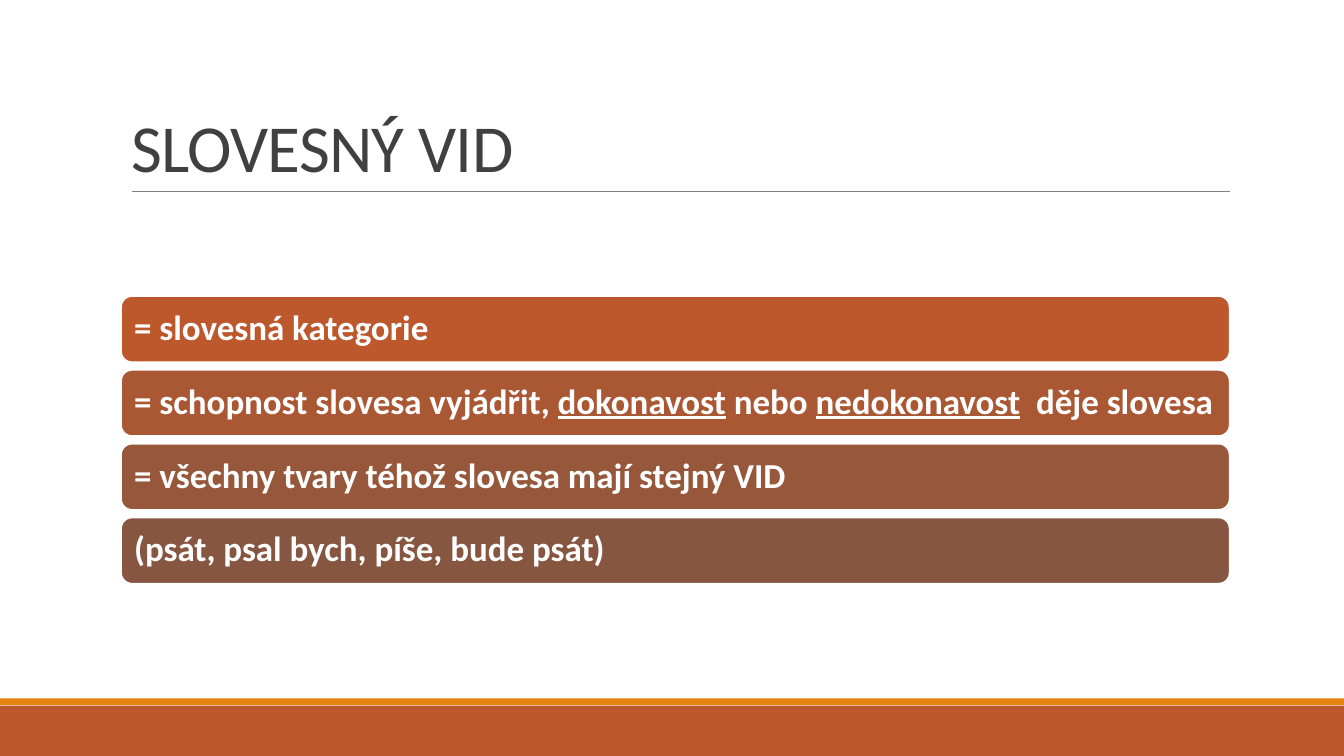
from pptx import Presentation
from pptx.dml.color import RGBColor
from pptx.enum.shapes import MSO_CONNECTOR as Connector, MSO_SHAPE as Shape
from pptx.enum.text import MSO_ANCHOR as Anchor, MSO_AUTO_SIZE as AutoSize, PP_ALIGN as Align
from pptx.oxml.ns import qn
from pptx.util import Cm, Pt
from lxml.etree import SubElement

SLIDE_WIDTH, SLIDE_HEIGHT = 33.87, 19.05
LEFT, WIDTH = 3.05, 27.94
STATEMENT_TOP, STATEMENT_HEIGHT, STATEMENT_STEP = 7.46, 1.67, 1.86
WHITE, RUST, ORANGE = "FFFFFF", "BD582C", "E48312"

TITLE_FONT = {"name": "Calibri", "size": Pt(48), "bold": False}
STATEMENT_FONT = {"name": "Calibri", "size": Pt(25), "bold": True}
TITLE_FRAME = {"auto_size": AutoSize.NONE, "word_wrap": True, "vertical_anchor": Anchor.BOTTOM}
STATEMENT_FRAME = {
    "word_wrap": True, "vertical_anchor": Anchor.MIDDLE,
    "margin_left": Cm(0.25), "margin_right": Cm(0.2),
    "margin_top": Cm(0.25), "margin_bottom": Cm(0.25),
}

STATEMENTS = [
    (RUST, ["= slovesná kategorie"]),
    ("AA5834", ["= schopnost slovesa vyjádřit, ", "dokonavost", " nebo ",
                "nedokonavost", "  děje slovesa"]),
    ("97573A", ["= všechny tvary téhož slovesa mají stejný VID"]),
    ("865640", ["(psát, psal bych, píše, bude psát)"]),
]


def apply(target, values):
    """Set each named attribute of the target."""
    for name, value in values.items():
        setattr(target, name, value)


def paint(colour_format, colour):
    """Give a fill or a font a solid hex colour."""
    if hasattr(colour_format, "solid"):
        colour_format.solid()
        colour_format = colour_format.fore_color
    else:
        colour_format = colour_format.color
    colour_format.rgb = RGBColor.from_string(colour)


def add_block(slide, kind, box, colour):
    """Add a flat filled shape without an outline."""
    block = slide.shapes.add_shape(kind, *map(Cm, box))
    block.shadow.inherit = False
    paint(block.fill, colour)
    block.line.fill.background()
    return block


def add_rule(slide, left, right, top):
    """Add the thin grey line below the title."""
    rule = slide.shapes.add_connector(
        Connector.STRAIGHT, Cm(left), Cm(top), Cm(right), Cm(top))
    rule.line.width = Pt(0.5)
    paint(rule.line.fill, "808080")
    SubElement(rule._element.spPr, qn("a:effectLst"))


def write_run(paragraph, text, font_values, colour):
    """Append a formatted run to a paragraph."""
    run = paragraph.add_run()
    run.text = text
    apply(run.font, font_values)
    paint(run.font, colour)
    return run


def fill_title(slide, text):
    """Place and format the title placeholder."""
    title = slide.shapes.title
    apply(title, {"left": Cm(LEFT), "top": Cm(0.79), "width": Cm(WIDTH), "height": Cm(4.04)})
    apply(title.text_frame, TITLE_FRAME)
    paragraph = title.text_frame.paragraphs[0]
    apply(paragraph, {"alignment": Align.LEFT, "line_spacing": 0.85})
    run = write_run(paragraph, text, TITLE_FONT, "404040")
    run.font._element.set("spc", "-50")


def add_statement(slide, top, colour, parts):
    """Add a rounded bar whose every second text part is underlined."""
    bar = add_block(slide, Shape.ROUNDED_RECTANGLE, (LEFT, top, WIDTH, STATEMENT_HEIGHT), colour)
    paint(bar.line.fill, WHITE)
    bar.line.width = Pt(1.25)
    apply(bar.text_frame, STATEMENT_FRAME)
    paragraph = bar.text_frame.paragraphs[0]
    apply(paragraph, {"alignment": Align.LEFT, "line_spacing": 0.9})
    for index, part in enumerate(parts):
        underline = {"underline": index % 2 == 1}
        write_run(paragraph, part, STATEMENT_FONT | underline, WHITE)


def main():
    """Build the slide and save it."""
    deck = Presentation()
    apply(deck, {"slide_width": Cm(SLIDE_WIDTH), "slide_height": Cm(SLIDE_HEIGHT)})
    slide = deck.slides.add_slide(deck.slide_layouts[5])
    add_block(slide, Shape.RECTANGLE, (0, 17.78, SLIDE_WIDTH, 1.27), RUST)
    add_block(slide, Shape.RECTANGLE, (0, 17.6, SLIDE_WIDTH, 0.17), ORANGE)
    add_rule(slide, 3.32, 31, 4.82)
    fill_title(slide, "SLOVESNÝ VID")
    for row, (colour, parts) in enumerate(STATEMENTS):
        add_statement(slide, STATEMENT_TOP + row * STATEMENT_STEP, colour, parts)
    deck.save("out.pptx")


if __name__ == "__main__":
    main()
